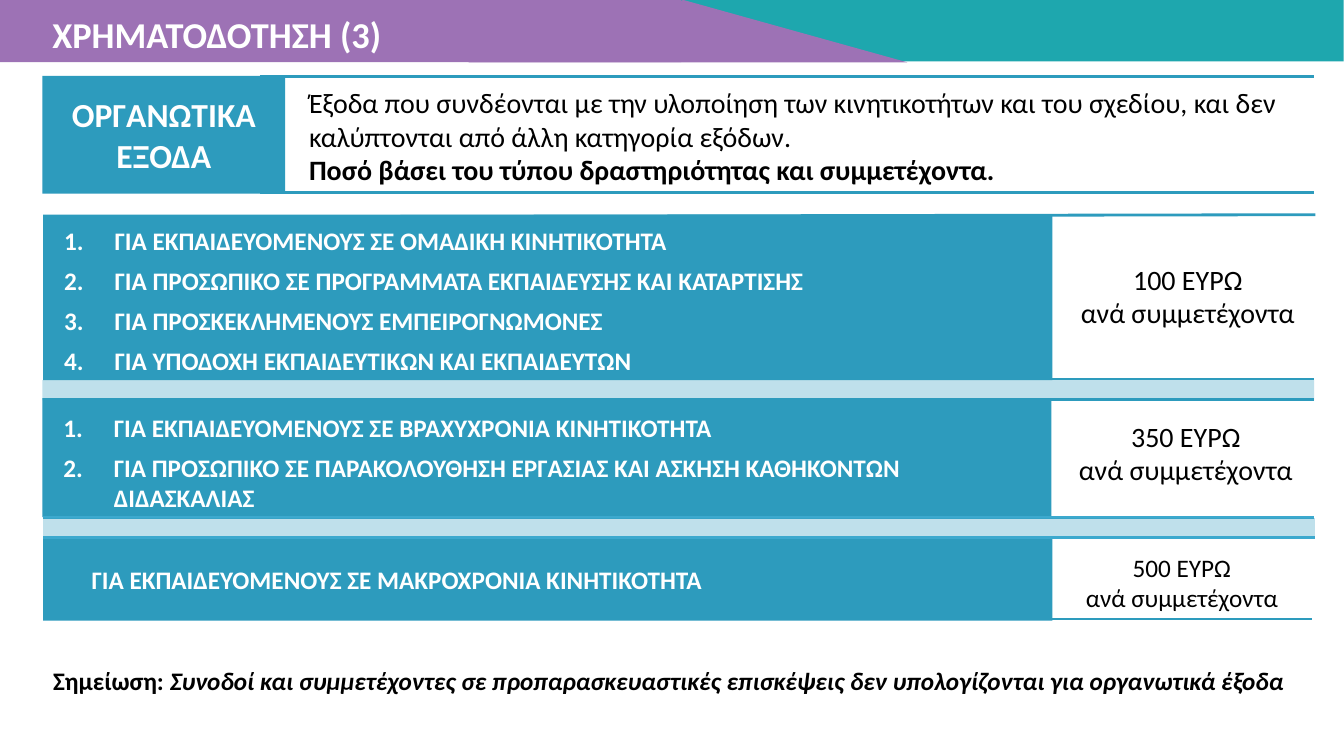
"""Builds the funding slide on organisational costs and its three payment tiers."""
from dataclasses import dataclass

from lxml import etree
from pptx import Presentation
from pptx import util as u
from pptx.dml import color as dml
from pptx.enum import shapes, text
from pptx.oxml import ns

COLORS = {
    "teal": "1EA7AE",
    "purple": "9D72B5",
    "blue": "2D9BBD",
    "sky": "3CA9CE",
    "white": "FFFFFF",
    "black": "000000",
}
FONT = "Calibri"
INDENT = u.Cm(1.27)


@dataclass(frozen=True)
class Area:
    left: float
    top: float
    width: float
    height: float

    def lengths(self) -> tuple:
        return tuple(u.Cm(n) for n in (self.left, self.top, self.width, self.height))


@dataclass(frozen=True)
class Rule:
    left: float
    top: float
    right: float
    bottom: float
    color: str = "blue"


@dataclass(frozen=True)
class Tier:
    panel: Area
    rules: tuple[Rule, ...]
    amount_area: Area
    amount: str
    amount_size: int
    activity_area: Area
    activities: str
    numbered: bool
    strip: Area | None = None


TIERS = (
    Tier(
        Area(1.09, 5.41, 25.43, 4.17),
        (Rule(6.55, 9.55, 33.12, 9.55), Rule(6.43, 5.46, 33.15, 5.41)),
        Area(26.85, 6.48, 6.17, 1.96), "100 ΕΥΡΩ", 20,
        Area(1.37, 5.56, 25.15, 5.11),
        "ΓΙΑ ΕΚΠΑΙΔΕΥΟΜΕΝΟΥΣ ΣΕ ΟΜΑΔΙΚΗ ΚΙΝΗΤΙΚΟΤΗΤΑ\n"
        "ΓΙΑ ΠΡΟΣΩΠΙΚΟ ΣΕ ΠΡΟΓΡΑΜΜΑΤΑ ΕΚΠΑΙΔΕΥΣΗΣ ΚΑΙ ΚΑΤΑΡΤΙΣΗΣ\n"
        "ΓΙΑ ΠΡΟΣΚΕΚΛΗΜΕΝΟΥΣ ΕΜΠΕΙΡΟΓΝΩΜΟΝΕΣ\n"
        "ΓΙΑ ΥΠΟΔΟΧΗ ΕΚΠΑΙΔΕΥΤΙΚΩΝ ΚΑΙ ΕΚΠΑΙΔΕΥΤΩΝ",
        True,
        Area(1.07, 9.58, 32.05, 0.51),
    ),
    Tier(
        Area(1.07, 10.03, 25.43, 3),
        (Rule(1.09, 13.03, 33.12, 13.03, "sky"), Rule(6.55, 10.06, 33.12, 10.06)),
        Area(26.8, 10.44, 6.17, 1.96), "350 ΕΥΡΩ", 20,
        Area(1.35, 10.26, 25.17, 5.36),
        "ΓΙΑ ΕΚΠΑΙΔΕΥΟΜΕΝΟΥΣ ΣΕ ΒΡΑΧΥΧΡΟΝΙΑ ΚΙΝΗΤΙΚΟΤΗΤΑ\n"
        "ΓΙΑ ΠΡΟΣΩΠΙΚΟ ΣΕ ΠΑΡΑΚΟΛΟΥΘΗΣΗ ΕΡΓΑΣΙΑΣ ΚΑΙ ΑΣΚΗΣΗ ΚΑΘΗΚΟΝΤΩΝ ΔΙΔΑΣΚΑΛΙΑΣ",
        True,
        Area(1.09, 13.06, 32.05, 0.46),
    ),
    Tier(
        Area(1.09, 13.51, 25.43, 2.13),
        (Rule(6.5, 15.6, 33.07, 15.6), Rule(1.09, 13.54, 33.15, 13.54, "sky")),
        Area(26.7, 13.79, 6.17, 1.8), "500 ΕΥΡΩ", 18,
        Area(2.06, 14.1, 24.64, 1.02),
        "ΓΙΑ ΕΚΠΑΙΔΕΥΟΜΕΝΟΥΣ ΣΕ ΜΑΚΡΟΧΡΟΝΙΑ ΚΙΝΗΤΙΚΟΤΗΤΑ",
        False,
    ),
)


def add_block(page, area: Area, color: str, kind=shapes.MSO_SHAPE.RECTANGLE, alpha: int = 100):
    block = page.shapes.add_shape(kind, *area.lengths())
    block.shadow.inherit = False
    block.fill.solid()
    block.fill.fore_color.rgb = dml.RGBColor.from_string(COLORS[color])
    block.line.fill.background()
    if alpha < 100:
        tint = block.fill._xPr.find(".//" + ns.qn("a:srgbClr"))
        etree.SubElement(tint, ns.qn("a:alpha"), val=str(alpha * 1000))
    return block


def add_rule(page, rule: Rule) -> None:
    ends = (u.Cm(n) for n in (rule.left, rule.top, rule.right, rule.bottom))
    line = page.shapes.add_connector(shapes.MSO_CONNECTOR.STRAIGHT, *ends)
    line.line.color.rgb = dml.RGBColor.from_string(COLORS[rule.color])
    line.line.width = u.Pt(2)
    etree.SubElement(line._element.spPr, ns.qn("a:effectLst"))


def add_box(page, area: Area, wrap: bool = True):
    frame = page.shapes.add_textbox(*area.lengths()).text_frame
    frame.word_wrap = wrap
    frame.auto_size = text.MSO_AUTO_SIZE.SHAPE_TO_FIT_TEXT
    return frame


def write(frame, words: str, *, size: int, color: str = "black", bold: bool = False,
          italic: bool = False, align=text.PP_ALIGN.LEFT, numbered: bool = False,
          same_line: bool = False) -> None:
    for line in words.split("\n"):
        para = frame.paragraphs[-1]
        if para.runs and not same_line:
            para = frame.add_paragraph()
        para.alignment = align
        if numbered and not para.runs:
            para.space_after = u.Pt(7)
            props = para._p.get_or_add_pPr()
            props.set("marL", str(INDENT))
            props.set("indent", str(-INDENT))
            etree.SubElement(props, ns.qn("a:buFont"), typeface=FONT)
            etree.SubElement(props, ns.qn("a:buAutoNum"), type="arabicPeriod")
        span = para.add_run()
        span.text = line
        span.font.name = FONT
        span.font.size = u.Pt(size)
        span.font.bold = bold
        span.font.italic = italic
        span.font.color.rgb = dml.RGBColor.from_string(COLORS[color])


def add_header(page) -> None:
    add_block(page, Area(12.24, 0, 21.62, 1.55), "teal")
    add_block(page, Area(0, 0, 17.17, 1.57), "purple")
    slope = add_block(page, Area(11.81, 0, 11.05, 1.57), "purple",
                      shapes.MSO_SHAPE.ISOSCELES_TRIANGLE)
    slope.adjustments[0] = 0.49
    title = add_box(page, Area(1.07, 0.18, 8.89, 1.37), wrap=False)
    write(title, "ΧΡΗΜΑΤΟΔΟΤΗΣΗ (3)", size=26, color="white", bold=True)


def add_summary(page) -> None:
    summary = add_box(page, Area(7.54, 2.03, 25.2, 2.82))
    write(summary, "Έξοδα που συνδέονται με την υλοποίηση των κινητικοτήτων και του σχεδίου, "
          "και δεν καλύπτονται από άλλη κατηγορία εξόδων.", size=20)
    write(summary, "Ποσό βάσει του τύπου δραστηριότητας και συμμετέχοντα.", size=20, bold=True)
    label = add_block(page, Area(1.07, 1.91, 6.12, 2.97), "blue").text_frame
    label.word_wrap = True
    label.vertical_anchor = text.MSO_ANCHOR.MIDDLE
    write(label, "ΟΡΓΑΝΩΤΙΚΑ ΕΞΟΔΑ", size=24, color="white", bold=True,
          align=text.PP_ALIGN.CENTER)
    for height in (4.85, 1.93):
        add_rule(page, Rule(6.55, height, 33.12, height))


def add_tier(page, tier: Tier) -> None:
    add_block(page, tier.panel, "blue")
    for rule in tier.rules:
        add_rule(page, rule)
    if tier.strip:
        add_block(page, tier.strip, "blue", alpha=30)
    write(add_box(page, tier.amount_area), f"{tier.amount}\nανά συμμετέχοντα",
          size=tier.amount_size, align=text.PP_ALIGN.CENTER)
    write(add_box(page, tier.activity_area), tier.activities, size=18, color="white",
          bold=True, numbered=tier.numbered)


def main() -> None:
    deck = Presentation()
    deck.slide_width, deck.slide_height = u.Cm(33.87), u.Cm(19.05)
    page = deck.slides.add_slide(deck.slide_layouts[6])
    add_header(page)
    add_summary(page)
    for tier in TIERS:
        add_tier(page, tier)
    note = add_box(page, Area(1.09, 16.64, 32.05, 1.02), wrap=False)
    write(note, "Σημείωση: ", size=18, bold=True)
    write(note, "Συνοδοί και συμμετέχοντες σε προπαρασκευαστικές επισκέψεις δεν υπολογίζονται "
          "για οργανωτικά έξοδα", size=18, bold=True, italic=True, same_line=True)
    deck.save("out.pptx")


if __name__ == "__main__":
    main()
